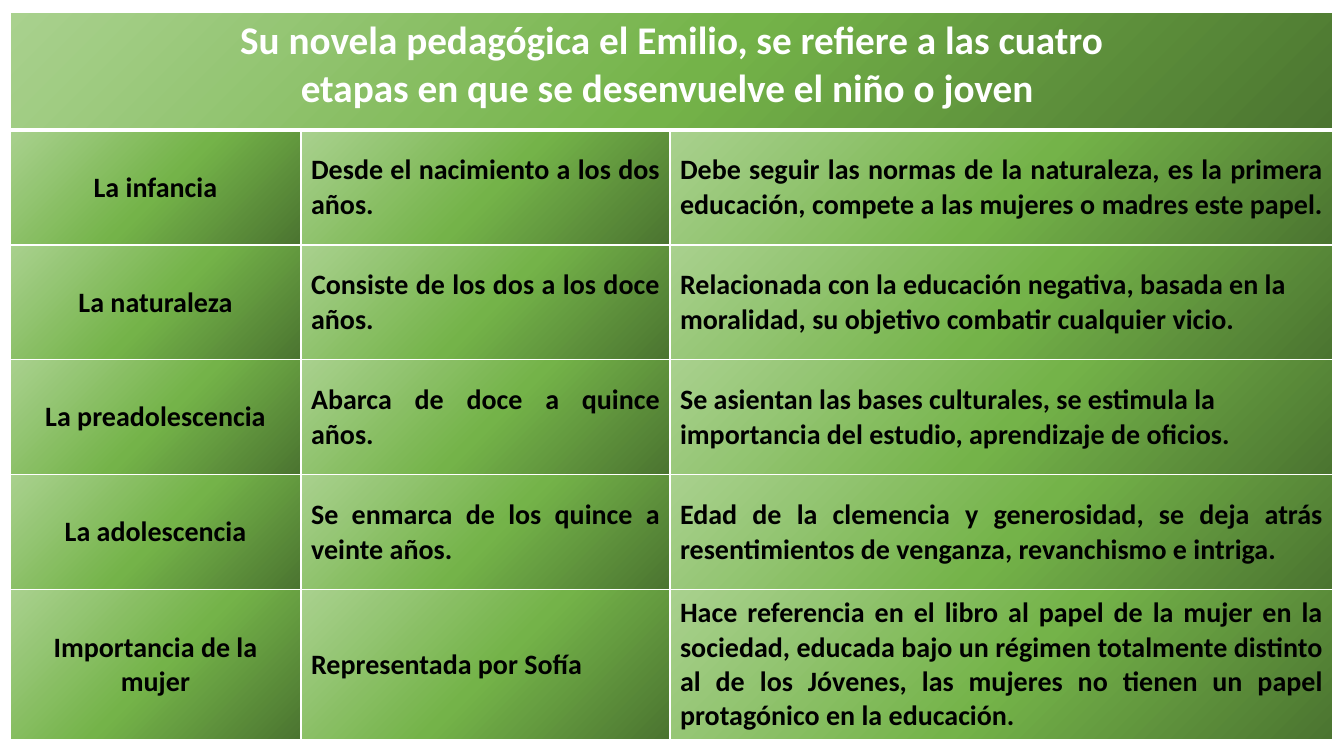
from lxml.etree import fromstring
from pptx import Presentation
from pptx.dml.color import RGBColor
from pptx.enum.text import MSO_ANCHOR, PP_ALIGN
from pptx.util import Emu, Pt

NS = 'xmlns:a="http://schemas.openxmlformats.org/drawingml/2006/main"'
COLORS = {"dark": "4B7430", "mid": "74B349", "light": "A9D18E", "white": "FFFFFF", "black": "000000"}
GRADIENT = [(0, "dark"), (48, "mid"), (100, "light")]
FONT = "Calibri"
SLIDE_WIDTH, SLIDE_HEIGHT = 1344, 756
COLUMN_WIDTHS = [291, 369, 663]
ROW_HEIGHTS = [118, 115, 115, 115, 115, 150]

HEADING = [
    "Su novela pedagógica el Emilio, se refiere a las cuatro",
    "etapas en que se desenvuelve el niño o joven ",
]
STAGES = [
    ("La infancia", "Desde el nacimiento a los dos años.",
     ["Debe seguir las normas de la naturaleza, es la primera educación, "
      "compete a las mujeres o madres este papel. "]),
    ("La naturaleza", "Consiste de los dos a los doce años.",
     ["Relacionada con la educación negativa, basada en la",
      "moralidad, su objetivo combatir cualquier vicio."]),
    ("La preadolescencia", "Abarca de doce a quince años.",
     ["Se asientan las bases culturales, se estimula la",
      "importancia del estudio, aprendizaje de oficios."]),
    ("La adolescencia", "Se enmarca de los quince a veinte años.",
     ["Edad de la clemencia y generosidad, se deja atrás resentimientos "
      "de venganza, revanchismo e intriga."]),
    ("Importancia de la mujer", "Representada por Sofía",
     ["Hace referencia en el libro al papel de la mujer en la sociedad, educada "
      "bajo un régimen totalmente distinto al de los Jóvenes, las mujeres no "
      "tienen un papel protagónico en la educación."]),
]


def px(length):
    """Turn whole pixels into EMU."""
    return Emu(round(length * 12192000 / SLIDE_WIDTH))


def write(frame, lines, size=20, color="black", align=PP_ALIGN.JUSTIFY):
    """Fill a text frame with one formatted paragraph per line."""
    for index, line in enumerate(lines):
        paragraph = frame.add_paragraph() if index else frame.paragraphs[0]
        paragraph.alignment = align
        run = paragraph.add_run()
        run.text = line
        run.font.name = FONT
        run.font.size = Pt(size)
        run.font.bold = True
        run.font.color.rgb = RGBColor.from_string(COLORS[color])


class StageSlide:
    """Hold the slide and draw its table elements in one style."""

    def __init__(self, deck):
        """Add a blank slide to the deck."""
        self.slide = deck.slides.add_slide(deck.slide_layouts[6])

    def table(self, left, top, widths, heights):
        """Add an unbanded table with the given columns and rows."""
        frame = self.slide.shapes.add_table(
            len(heights), len(widths), px(left), px(top), px(sum(widths)), px(sum(heights)))
        grid = frame.table
        grid.first_row = grid.horz_banding = False
        for column, width in zip(grid.columns, widths):
            column.width = px(width)
        for row, height in zip(grid.rows, heights):
            row.height = px(height)
        return grid

    def style_cell(self, cell, top=1, bottom=1):
        """Give a cell white borders and the green corner gradient."""
        properties = cell._tc.get_or_add_tcPr()
        for side, width in {"L": 1, "R": 1, "T": top, "B": bottom}.items():
            properties.append(fromstring(
                f'<a:ln{side} {NS} w="{Pt(width)}"><a:solidFill>'
                f'<a:srgbClr val="{COLORS["white"]}"/></a:solidFill></a:ln{side}>'))
        stops = "".join(
            f'<a:gs pos="{position * 1000}"><a:srgbClr val="{COLORS[color]}"/></a:gs>'
            for position, color in GRADIENT)
        properties.append(fromstring(
            f'<a:gradFill {NS} rotWithShape="1"><a:gsLst>{stops}</a:gsLst>'
            '<a:path path="circle"><a:fillToRect l="100000" t="100000"/></a:path>'
            '<a:tileRect r="-100000" b="-100000"/></a:gradFill>'))

    def heading(self, grid, lines):
        """Merge the first row into a heading."""
        cells = list(grid.rows[0].cells)
        for cell in cells:
            self.style_cell(cell, bottom=3)
        cells[0].merge(cells[-1])
        write(cells[0].text_frame, lines, size=28, color="white", align=PP_ALIGN.CENTER)

    def stage(self, row, name, period, description, top):
        """Fill one row with a stage, its period and its description."""
        aligns = [PP_ALIGN.CENTER, PP_ALIGN.JUSTIFY, PP_ALIGN.JUSTIFY]
        for cell, lines, align in zip(row.cells, ([name], [period], description), aligns):
            self.style_cell(cell, top=top)
            cell.vertical_anchor = MSO_ANCHOR.MIDDLE
            write(cell.text_frame, lines, align=align)


def main():
    """Build the slide and save it."""
    deck = Presentation()
    deck.slide_width, deck.slide_height = px(SLIDE_WIDTH), px(SLIDE_HEIGHT)
    page = StageSlide(deck)
    grid = page.table(10, 12, COLUMN_WIDTHS, ROW_HEIGHTS)
    page.heading(grid, HEADING)
    for index, (name, period, description) in enumerate(STAGES, start=1):
        page.stage(grid.rows[index], name, period, description, top=3 if index == 1 else 1)
    deck.save("out.pptx")


if __name__ == "__main__":
    main()
